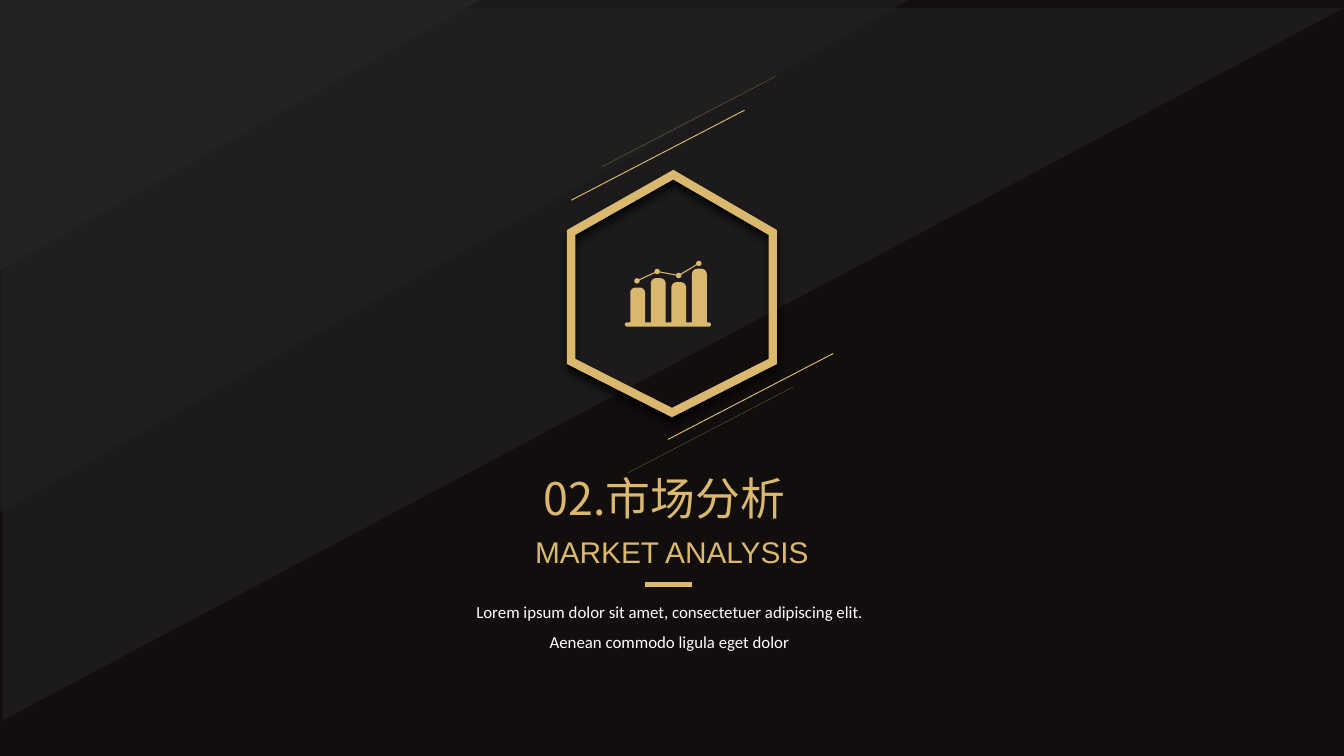
from dataclasses import dataclass
from math import atan2, cos, hypot, pi, sin

from lxml.etree import SubElement
from pptx import Presentation
from pptx.dml.color import RGBColor
from pptx.enum.shapes import MSO_CONNECTOR, MSO_SHAPE
from pptx.enum.text import MSO_ANCHOR, PP_ALIGN
from pptx.oxml.ns import qn
from pptx.shapes.shapetree import GroupShapes
from pptx.slide import Slide
from pptx.util import Inches, Pt

Point = tuple[float, float]


@dataclass(frozen=True)
class Theme:
    background: str = "120E0D"
    panel: str = "232323"
    gold: str = "DAB96E"
    rim: str = "020302"
    white: str = "FFFFFF"
    title_size: float = 24
    subtitle_size: float = 16
    body_size: float = 9


@dataclass(frozen=True)
class Panel:
    left: float
    top: float
    width: float
    height: float
    opacity: int


@dataclass(frozen=True)
class Stroke:
    start: Point
    end: Point
    weight: float
    opacity: int = 100


@dataclass(frozen=True)
class Bar:
    left: float
    top: float


THEME = Theme()

PANELS = [
    Panel(0.02, 0.06, 9.98, 5.3, 60),
    Panel(0, 0, 6.76, 3.81, 60),
    Panel(0, 0, 3.57, 2.01, 100),
]

STROKE_PAIRS = [
    [Stroke((4.25, 1.49), (5.54, 0.82), 0.5), Stroke((4.48, 1.24), (5.77, 0.57), 0.25, 40)],
    [Stroke((4.97, 3.27), (6.2, 2.63), 0.5), Stroke((4.67, 3.52), (5.9, 2.88), 0.25, 40)],
]
DIVIDER = Stroke((4.8, 4.35), (5.15, 4.35), 2.25)

HEXAGON = [(5.01, 1.3), (5.75, 1.73), (5.75, 2.69), (5, 3.07), (4.25, 2.69), (4.25, 1.73)]

BAR_WIDTH, BAR_RADIUS, BAR_PITCH = 0.11, 0.04, 0.153
BARS = [Bar(4.69 + i * BAR_PITCH, top) for i, top in enumerate([2.14, 2.07, 2.1, 2])]
BASE_LEFT, BASE_RIGHT, BASE_TOP, BASE_BOTTOM = 4.65, 5.29, 2.4, 2.43
TREND = [(4.74, 2.09), (4.89, 2.02), (5.05, 2.05), (5.2, 1.96)]
DOT_RADIUS, LINK_WIDTH = 0.02, 0.008


def set_opacity(properties, percent: int) -> None:
    """Give the first colour below these properties an alpha value."""
    if percent < 100:
        color = next(properties.iter(qn("a:srgbClr")))
        SubElement(color, qn("a:alpha"), val=str(percent * 1000))


def arc(center: Point, radius: float, start: float, end: float, steps: int) -> list[Point]:
    angles = [start + (end - start) * i / steps for i in range(steps + 1)]
    return [(center[0] + radius * cos(a), center[1] + radius * sin(a)) for a in angles]


def add_panel(page: Slide, panel: Panel) -> None:
    """A right triangle turned so that its right angle is at the top left."""
    shift = (panel.width - panel.height) / 2
    shape = page.shapes.add_shape(
        MSO_SHAPE.RIGHT_TRIANGLE,
        Inches(panel.left + shift), Inches(panel.top - shift),
        Inches(panel.height), Inches(panel.width))
    shape.rotation = 90
    shape.shadow.inherit = False
    shape.fill.solid()
    shape.fill.fore_color.rgb = RGBColor.from_string(THEME.panel)
    shape.line.fill.background()
    set_opacity(shape.fill._xPr, panel.opacity)


def add_stroke(shapes: GroupShapes, stroke: Stroke) -> None:
    ends = [Inches(value) for value in (*stroke.start, *stroke.end)]
    connector = shapes.add_connector(MSO_CONNECTOR.STRAIGHT, *ends)
    connector.line.width = Pt(stroke.weight)
    connector.line.color.rgb = RGBColor.from_string(THEME.gold)
    properties = connector._element.spPr
    set_opacity(properties, stroke.opacity)
    SubElement(properties, qn("a:effectLst"))


def add_outline(shapes: GroupShapes, points: list[Point]):
    start, *others = [(Inches(x), Inches(y)) for x, y in points]
    builder = shapes.build_freeform(*start)
    builder.add_line_segments(others, close=True)
    shape = builder.convert_to_shape()
    shape.shadow.inherit = False
    return shape


def add_frame(shapes: GroupShapes, points: list[Point], color: str) -> None:
    """An unfilled outline with sharp corners and a soft shadow below."""
    shape = add_outline(shapes, points)
    shape.fill.background()
    shape.line.width = Pt(4.5)
    shape.line.color.rgb = RGBColor.from_string(color)
    properties = shape._element.spPr
    SubElement(properties.find(qn("a:ln")), qn("a:miter"), lim="800000")
    shadow = SubElement(
        properties.find(qn("a:effectLst")), qn("a:outerShdw"),
        blurRad=str(Pt(4)), dist=str(Pt(3)), dir="5400000", algn="t", rotWithShape="0")
    shade = SubElement(shadow, qn("a:srgbClr"), val="000000")
    SubElement(shade, qn("a:alpha"), val="40000")


def add_silhouette(shapes: GroupShapes, points: list[Point]) -> None:
    shape = add_outline(shapes, points)
    shape.fill.solid()
    shape.fill.fore_color.rgb = RGBColor.from_string(THEME.gold)
    shape.line.fill.background()


def bar_points() -> list[Point]:
    """Round-topped bars standing on a base with clipped ends."""
    clip = 0.01
    points = [(BASE_LEFT + clip, BASE_BOTTOM), (BASE_LEFT, BASE_BOTTOM - clip),
              (BASE_LEFT, BASE_TOP + clip), (BASE_LEFT + clip, BASE_TOP)]
    for bar in BARS:
        right, shoulder = bar.left + BAR_WIDTH, bar.top + BAR_RADIUS
        points.append((bar.left, BASE_TOP))
        points += arc((bar.left + BAR_RADIUS, shoulder), BAR_RADIUS, pi, 1.5 * pi, 6)
        points += arc((right - BAR_RADIUS, shoulder), BAR_RADIUS, 1.5 * pi, 2 * pi, 6)
        points.append((right, BASE_TOP))
    return points + [(BASE_RIGHT - clip, BASE_TOP), (BASE_RIGHT, BASE_TOP + clip),
                     (BASE_RIGHT, BASE_BOTTOM - clip), (BASE_RIGHT - clip, BASE_BOTTOM)]


def trend_points() -> list[Point]:
    """Walk along the dots and back, rounding each one clockwise."""
    route = TREND + TREND[-2:0:-1]
    gap = LINK_WIDTH / 2 / DOT_RADIUS
    points = []
    for i, (x, y) in enumerate(route):
        before, after = route[i - 1], route[(i + 1) % len(route)]
        start = atan2(before[1] - y, before[0] - x) + gap
        end = atan2(after[1] - y, after[0] - x) - gap
        while end <= start:
            end += 2 * pi
        points += arc((x, y), DOT_RADIUS, start, end, 12)
    return points


def add_text(page: Slide, text: str, *, left: float, top: float, width: float, height: float,
             font: str, size: float, color: str, align: PP_ALIGN = PP_ALIGN.CENTER,
             spacing: float = 1.0) -> None:
    box = page.shapes.add_textbox(Inches(left), Inches(top), Inches(width), Inches(height))
    frame = box.text_frame
    frame.word_wrap = True
    frame.vertical_anchor = MSO_ANCHOR.TOP
    para = frame.paragraphs[0]
    para.alignment = align
    para.line_spacing = spacing
    span = para.add_run()
    span.text = text
    span.font.name = font
    span.font.size = Pt(size)
    span.font.color.rgb = RGBColor.from_string(color)
    SubElement(span.font._element, qn("a:ea"), typeface=font)


def main() -> None:
    deck = Presentation()
    deck.slide_width, deck.slide_height = Inches(10), Inches(5.625)
    page = deck.slides.add_slide(deck.slide_layouts[6])

    # Background
    page.background.fill.solid()
    page.background.fill.fore_color.rgb = RGBColor.from_string(THEME.background)
    for panel in PANELS:
        add_panel(page, panel)

    # Hexagon: dark rim just below the gold frame
    badge = page.shapes.add_group_shape().shapes
    add_frame(badge, [(x, y + 0.02) for x, y in HEXAGON], THEME.rim)
    add_frame(badge, HEXAGON, THEME.gold)

    # Headings
    add_text(page, "MARKET ANALYSIS", left=3.3, top=3.92, width=3.4, height=0.37,
             font="Arial", size=THEME.subtitle_size, color=THEME.gold)
    add_text(page, "02.市场分析", left=3.72, top=3.45, width=2.22, height=0.5,
             font="Noto Sans CJK SC", size=THEME.title_size, color=THEME.gold,
             align=PP_ALIGN.RIGHT)

    # Slanted strokes and divider
    for pair in STROKE_PAIRS:
        accents = page.shapes.add_group_shape().shapes
        for stroke in pair:
            add_stroke(accents, stroke)
    add_stroke(page.shapes, DIVIDER)

    # Body text
    add_text(page, "Lorem ipsum dolor sit amet, consectetuer adipiscing elit. "
             "Aenean commodo ligula eget dolor", left=3.25, top=4.35, width=3.46, height=0.53,
             font="Calibri", size=THEME.body_size, color=THEME.white, spacing=1.5)

    # Chart icon
    icon = page.shapes.add_group_shape().shapes
    add_silhouette(icon, trend_points())
    add_silhouette(icon, bar_points())

    deck.save("out.pptx")


if __name__ == "__main__":
    main()
